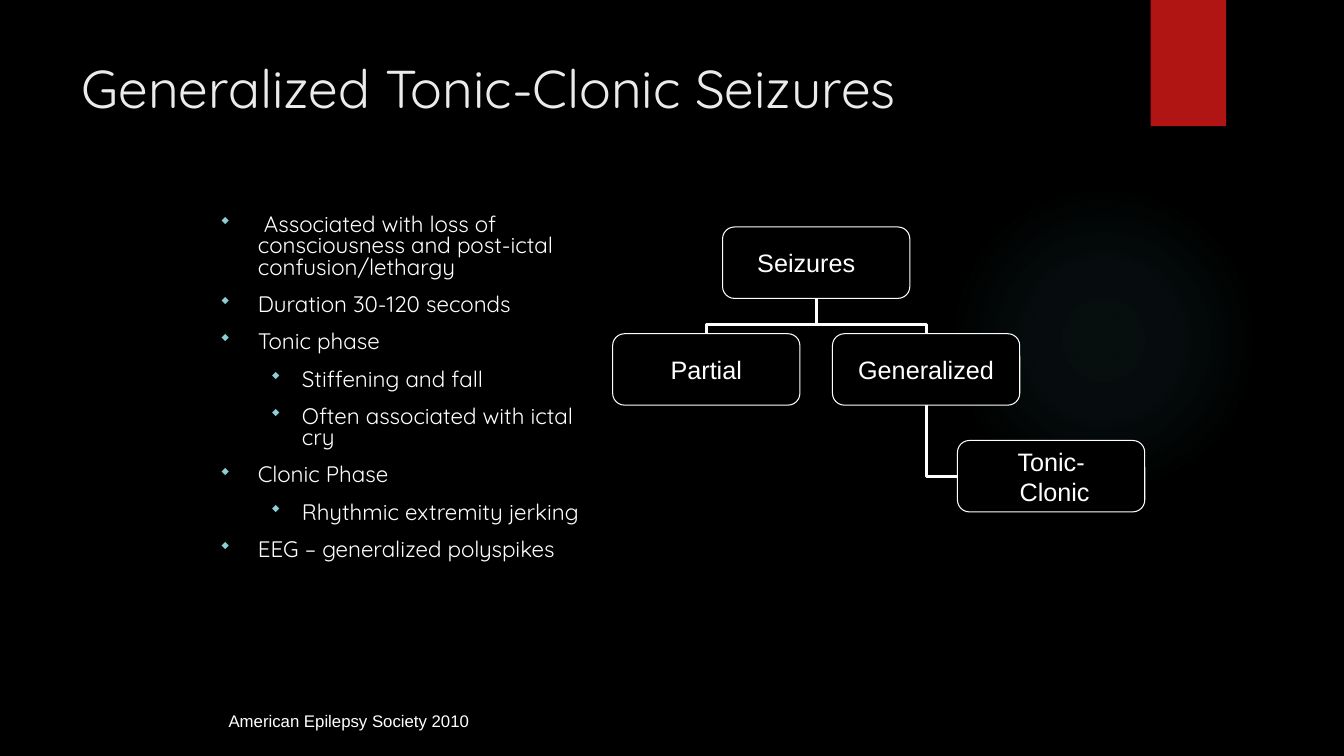
from dataclasses import dataclass

from lxml.etree import SubElement
from pptx import Presentation
from pptx.dml.color import RGBColor
from pptx.enum.shapes import MSO_CONNECTOR, MSO_SHAPE
from pptx.enum.text import MSO_ANCHOR, PP_ALIGN
from pptx.oxml.ns import qn
from pptx.slide import Slide
from pptx.util import Cm, Pt

BLACK = RGBColor(0x00, 0x00, 0x00)
WHITE = RGBColor(0xFF, 0xFF, 0xFF)
TITLE_GREY = RGBColor(0xEB, 0xEB, 0xEB)
RED = RGBColor(0xB0, 0x15, 0x13)
BULLET_TEAL = RGBColor(0x8A, 0xD0, 0xD6)
GLOW_TEAL = RGBColor(0x50, 0xB9, 0xC1)

BOX_WIDTH, BOX_HEIGHT = 4.72, 1.8
ROW_TOP, ROW_PITCH = 5.72, 2.69
ROOT_CENTER, BRANCH_OFFSET = 20.57, 2.77


@dataclass
class Bullet:
    text: str
    level: int = 0


@dataclass
class Node:
    lines: list[str]
    center: float
    row: int
    right_inset: float = 0

    @property
    def left(self) -> float:
        return self.center - BOX_WIDTH / 2

    @property
    def top(self) -> float:
        return ROW_TOP + self.row * ROW_PITCH

    @property
    def bottom(self) -> float:
        return self.top + BOX_HEIGHT


BULLETS = [
    Bullet(" Associated with loss of consciousness and post-ictal confusion/lethargy"),
    Bullet("Duration 30-120 seconds"),
    Bullet("Tonic phase"),
    Bullet("Stiffening and fall", 1),
    Bullet("Often associated with ictal cry", 1),
    Bullet("Clonic Phase"),
    Bullet("Rhythmic extremity jerking", 1),
    Bullet("EEG – generalized polyspikes"),
]
SEIZURES = Node(["Seizures"], ROOT_CENTER, 0, right_inset=0.5)
PARTIAL = Node(["Partial"], ROOT_CENTER - BRANCH_OFFSET, 1)
GENERALIZED = Node(["Generalized"], ROOT_CENTER + BRANCH_OFFSET, 1)
TONIC_CLONIC = Node(["Tonic-", " Clonic"], 26.49, 2)


def add_run(paragraph, text: str, font_name: str, size: float, color: RGBColor) -> None:
    run = paragraph.add_run()
    run.text = text
    run.font.name = font_name
    run.font.size = Pt(size)
    run.font.color.rgb = color


def add_plain_shape(slide: Slide, kind, left, top, width, height, color: RGBColor):
    shape = slide.shapes.add_shape(kind, Cm(left), Cm(top), Cm(width), Cm(height))
    shape.shadow.inherit = False
    shape.fill.solid()
    shape.fill.fore_color.rgb = color
    shape.line.fill.background()
    return shape


def add_glow(slide: Slide) -> None:
    glow = add_plain_shape(slide, MSO_SHAPE.OVAL, 23.9, 4.65, 7.82, 7.82, GLOW_TEAL)
    properties = glow._element.spPr
    solid = properties.find(qn("a:solidFill"))
    gradient = SubElement(properties, qn("a:gradFill"), rotWithShape="1")
    properties.replace(solid, gradient)
    stops = SubElement(gradient, qn("a:gsLst"))
    for position, opacity in ((0, 7), (36, 6), (69, 0)):
        stop = SubElement(stops, qn("a:gs"), pos=str(position * 1000))
        color = SubElement(stop, qn("a:srgbClr"), val=str(GLOW_TEAL))
        SubElement(color, qn("a:alpha"), val=str(opacity * 1000))
    radial = SubElement(gradient, qn("a:path"), path="circle")
    SubElement(radial, qn("a:fillToRect"), l="50000", t="50000", r="50000", b="50000")


def add_bullets(slide: Slide, bullets: list[Bullet]) -> None:
    box = slide.shapes.add_textbox(Cm(5.3), Cm(5.3), Cm(9.83), Cm(9.96))
    frame = box.text_frame
    frame.word_wrap = True
    for index, bullet in enumerate(bullets):
        paragraph = frame.paragraphs[0] if index == 0 else frame.add_paragraph()
        paragraph.level = bullet.level
        paragraph.line_spacing = 0.8
        paragraph.space_before = Pt(11.2 if index else 0)
        margin, hanging = ((0.95, 0.95), (2.06, 0.79))[bullet.level]
        properties = paragraph._p.get_or_add_pPr()
        properties.set("marL", str(Cm(margin)))
        properties.set("indent", str(-Cm(hanging)))
        color = SubElement(properties, qn("a:buClr"))
        SubElement(color, qn("a:srgbClr"), val=str(BULLET_TEAL))
        SubElement(properties, qn("a:buSzPct"), val="80000")
        # The letter w is a small diamond in the symbol font
        SubElement(properties, qn("a:buFont"), typeface="Wingdings",
                   pitchFamily="2", charset="2")
        SubElement(properties, qn("a:buChar"), char="w")
        add_run(paragraph, bullet.text, "Quicksand", 16, WHITE)


def add_elbow(slide: Slide, preset: str, middle_x: float, middle_y: float,
              width: float, height: float, rotation: int, flip: bool = False) -> None:
    """Draw a white elbow whose unrotated frame is centred on the middle point."""
    left, top = middle_x - width / 2, middle_y - height / 2
    connector = slide.shapes.add_connector(
        MSO_CONNECTOR.ELBOW, Cm(left), Cm(top), Cm(left + width), Cm(top + height))
    connector.line.color.rgb = WHITE
    connector.line.width = Pt(2.25)
    properties = connector._element.spPr
    SubElement(properties, qn("a:effectLst"))
    frame = properties.find(qn("a:xfrm"))
    frame.set("rot", str(rotation * 60000))
    if flip:
        frame.set("flipH", "1")
    geometry = properties.find(qn("a:prstGeom"))
    geometry.set("prst", preset)
    if preset == "bentConnector3":
        SubElement(geometry.find(qn("a:avLst")), qn("a:gd"), name="adj1", fmla="val 25500")


def add_branch(slide: Slide, parent: Node, child: Node) -> None:
    to_right = child.center > parent.center
    add_elbow(slide, "bentConnector3", (parent.center + child.center) / 2,
              (parent.bottom + child.top) / 2, child.top - parent.bottom,
              abs(child.center - parent.center), 90 if to_right else 270, to_right)


def add_side_branch(slide: Slide, parent: Node, child: Node) -> None:
    child_middle = child.top + BOX_HEIGHT / 2
    add_elbow(slide, "bentConnector2", (parent.center + child.left) / 2,
              (parent.bottom + child_middle) / 2, child.left - parent.center,
              child_middle - parent.bottom, 180)


def add_node(slide: Slide, node: Node) -> None:
    box = add_plain_shape(slide, MSO_SHAPE.ROUNDED_RECTANGLE, node.left, node.top,
                          BOX_WIDTH, BOX_HEIGHT, BLACK)
    box.line.color.rgb = WHITE
    box.line.width = Pt(0.75)
    frame = box.text_frame
    frame.word_wrap = False
    frame.vertical_anchor = MSO_ANCHOR.MIDDLE
    frame.margin_left = frame.margin_top = frame.margin_bottom = 0
    frame.margin_right = Cm(node.right_inset)
    for index, line in enumerate(node.lines):
        paragraph = frame.paragraphs[0] if index == 0 else frame.add_paragraph()
        paragraph.alignment = PP_ALIGN.CENTER
        add_run(paragraph, line, "Arial", 18, WHITE)


def main() -> None:
    presentation = Presentation()
    presentation.slide_width, presentation.slide_height = Cm(33.87), Cm(19.05)
    slide = presentation.slides.add_slide(presentation.slide_layouts[5])

    # Background and decoration
    slide.background.fill.solid()
    slide.background.fill.fore_color.rgb = BLACK
    add_glow(slide)
    add_plain_shape(slide, MSO_SHAPE.RECTANGLE, 29, 0, 1.9, 3.18, RED)

    # Title
    title = slide.shapes.title
    title.left, title.top, title.width, title.height = Cm(1.8), Cm(1.27), Cm(26.14), Cm(3.89)
    title.text_frame.vertical_anchor = MSO_ANCHOR.TOP
    paragraph = title.text_frame.paragraphs[0]
    paragraph.alignment = PP_ALIGN.LEFT
    add_run(paragraph, "Generalized Tonic-Clonic Seizures", "Quicksand", 38, TITLE_GREY)

    # Clinical features
    add_bullets(slide, BULLETS)

    # Seizure classification tree
    add_side_branch(slide, GENERALIZED, TONIC_CLONIC)
    add_branch(slide, SEIZURES, GENERALIZED)
    add_branch(slide, SEIZURES, PARTIAL)
    for node in (SEIZURES, PARTIAL, GENERALIZED, TONIC_CLONIC):
        add_node(slide, node)

    # Source
    source = slide.shapes.add_textbox(Cm(5.51), Cm(17.78), Cm(6.63), Cm(0.76))
    source.text_frame.word_wrap = False
    add_run(source.text_frame.paragraphs[0], "American Epilepsy Society 2010", "Arial", 12, WHITE)

    presentation.save("out.pptx")


if __name__ == "__main__":
    main()
